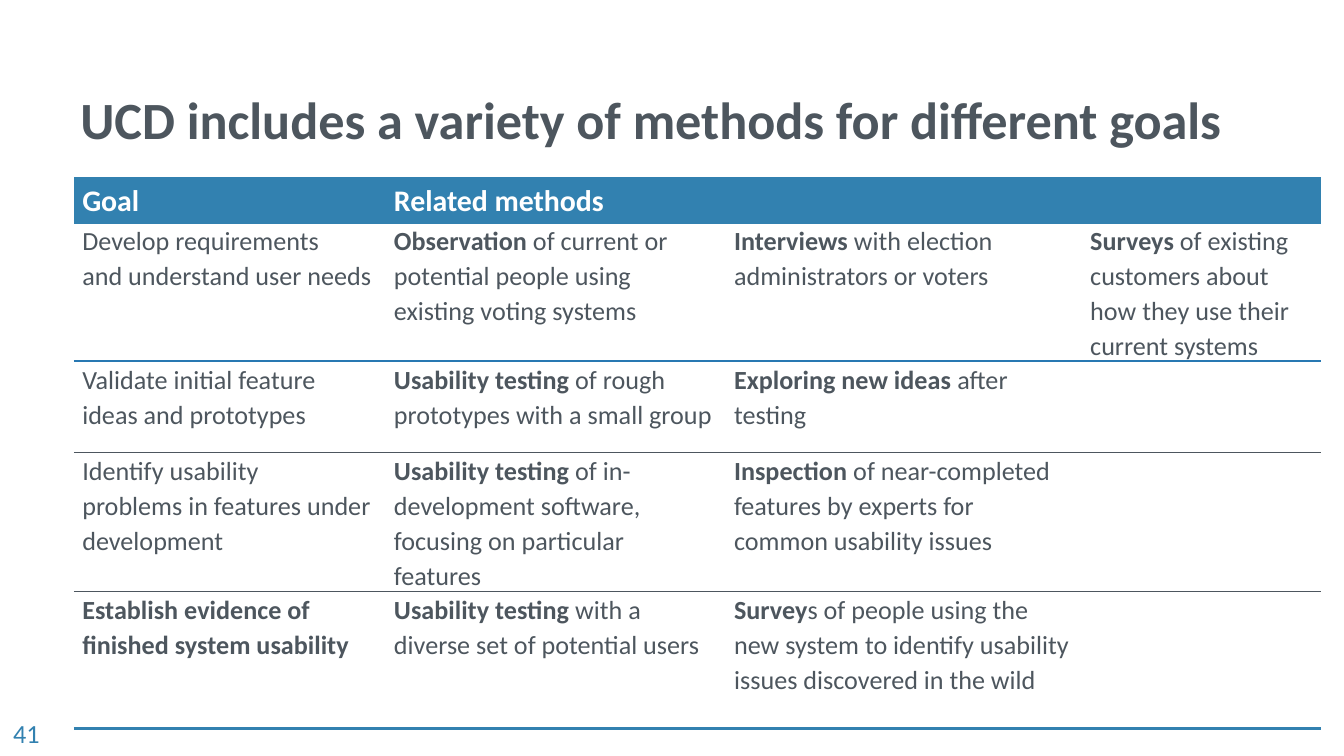
from dataclasses import dataclass
from typing import NamedTuple

from lxml import etree
from pptx import Presentation, util as u
from pptx.dml.color import RGBColor
from pptx.enum import text
from pptx.oxml import ns


@dataclass(frozen=True)
class Theme:
    font: str = "Calibri"
    blue: str = "3281B0"
    rule: str = "2878B2"
    ink: str = "4D565E"
    white: str = "FFFFFF"
    title_size: float = 28
    header_size: float = 16
    body_size: float = 14


class Box(NamedTuple):
    left: float
    top: float
    width: float
    height: float


class Entry(NamedTuple):
    strong: str = ""
    plain: str = ""


@dataclass(frozen=True)
class Row:
    height: float
    entries: tuple[Entry, ...]
    rule_color: str
    rule_width: float
    header: bool = False


THEME = Theme()
NO_STYLE = "{2D5ABB26-0587-4C30-8999-92F81FD0307C}"
COLUMN_WIDTHS = (167, 182.2, 190.8, 128.2)
ROWS = (
    Row(24, (Entry("Goal"), Entry("Related methods"), Entry(), Entry()),
        THEME.blue, 2, header=True),
    Row(74.5, (
        Entry("", "Develop requirements \vand understand user needs"),
        Entry("Observation", " of current or potential people using existing voting systems"),
        Entry("Interviews", " with election administrators or voters"),
        Entry("Surveys ", "of existing customers about how they use their current systems"),
    ), THEME.rule, 1),
    Row(49, (
        Entry("", "Validate initial feature ideas and prototypes"),
        Entry("Usability testing ", "of rough prototypes with a small group"),
        Entry("Exploring new ideas ", "after testing"),
        Entry(),
    ), THEME.ink, 0.75),
    Row(74.5, (
        Entry("", "Identify usability \vproblems in features under development"),
        Entry("Usability testing ",
              "of in-development software, focusing on particular features"),
        Entry("Inspection", " of near-completed features by experts for common usability issues"),
        Entry(),
    ), THEME.ink, 0.75),
    Row(73.5, (
        Entry("Establish evidence of finished system usability"),
        Entry("Usability testing ", "with a diverse set of potential users"),
        Entry("Survey", "s of people using the new system to identify usability issues "
                        "discovered in the wild"),
        Entry(),
    ), THEME.blue, 2),
)


def style_paragraph(paragraph, size: float, color: str) -> None:
    paragraph.font.name = THEME.font
    paragraph.font.size = u.Pt(size)
    paragraph.font.color.rgb = RGBColor.from_string(color)


def add_label(slide, box: Box, content: str, size: float, color: str,
              bold: bool = False) -> None:
    shape = slide.shapes.add_textbox(*map(u.Pt, box))
    frame = shape.text_frame
    frame.word_wrap = True
    frame.vertical_anchor = text.MSO_ANCHOR.BOTTOM if bold else text.MSO_ANCHOR.TOP
    paragraph = frame.paragraphs[0]
    paragraph.text = content
    style_paragraph(paragraph, size, color)
    paragraph.font.bold = bold


def add_bottom_rule(cell, color: str, width: float) -> None:
    line = etree.Element(ns.qn("a:lnB"), w=str(u.Pt(width)))
    fill = etree.SubElement(line, ns.qn("a:solidFill"))
    etree.SubElement(fill, ns.qn("a:srgbClr"), val=color)
    cell._tc.get_or_add_tcPr().insert(0, line)


def fill_cell(cell, entry: Entry, row: Row) -> None:
    cell.margin_left = cell.margin_right = u.Pt(4.5)
    cell.margin_top = cell.margin_bottom = u.Pt(0)
    cell.fill.solid()
    cell.fill.fore_color.rgb = RGBColor.from_string(THEME.blue if row.header else THEME.white)
    add_bottom_rule(cell, row.rule_color, row.rule_width)
    paragraph = cell.text_frame.paragraphs[0]
    paragraph.line_spacing = 1.15 if row.header else 1.1
    style_paragraph(paragraph, THEME.header_size if row.header else THEME.body_size,
                    THEME.white if row.header else THEME.ink)
    if entry.strong:
        run = paragraph.add_run()
        run.text = entry.strong
        run.font.bold = True
    for index, part in enumerate(entry.plain.split("\v")):
        if index:
            paragraph.add_line_break()
        if part:
            paragraph.add_run().text = part


def add_methods_table(slide, left: float, top: float) -> None:
    frame = slide.shapes.add_table(
        len(ROWS), len(COLUMN_WIDTHS), u.Pt(left), u.Pt(top),
        u.Pt(sum(COLUMN_WIDTHS)), u.Pt(sum(row.height for row in ROWS)))
    table = frame.table
    table.horz_banding = False
    table._tbl.tblPr.find(ns.qn("a:tableStyleId")).text = NO_STYLE
    for column, width in zip(table.columns, COLUMN_WIDTHS):
        column.width = u.Pt(width)
    for table_row, row in zip(table.rows, ROWS):
        table_row.height = u.Pt(row.height)
        for cell, entry in zip(table_row.cells, row.entries):
            fill_cell(cell, entry, row)


def main() -> None:
    presentation = Presentation()
    presentation.slide_width = u.Pt(720)
    presentation.slide_height = u.Pt(405)
    slide = presentation.slides.add_slide(presentation.slide_layouts[6])
    add_label(slide, Box(0, 381, 36.5, 24.5), "41", THEME.body_size, THEME.blue)
    add_label(slide, Box(36, 16.5, 648, 67.5),
              "UCD includes a variety of methods for different goals",
              THEME.title_size, THEME.ink, bold=True)
    add_methods_table(slide, 39.6, 95)
    presentation.save("out.pptx")


if __name__ == "__main__":
    main()
